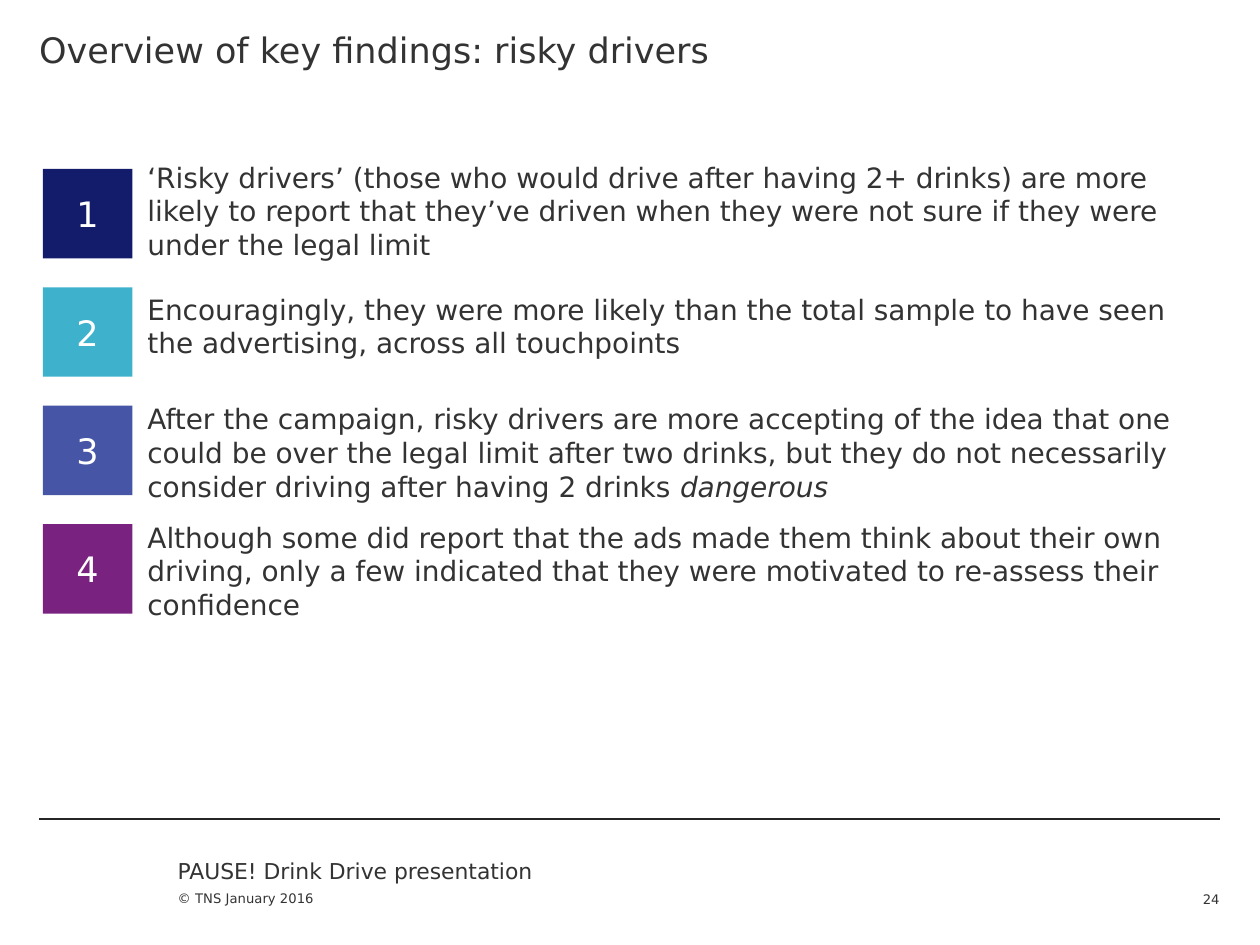
from dataclasses import dataclass

import pptx
import pptx.dml.color
import pptx.enum.shapes
import pptx.enum.text
import pptx.oxml
import pptx.util
from pptx.util import Inches

ALIGN = pptx.enum.text.PP_ALIGN
ANCHOR = pptx.enum.text.MSO_ANCHOR


@dataclass(frozen=True)
class Theme:
    font: str = "DejaVu Sans"
    ink: str = "333333"
    rule: str = "262626"
    white: str = "FFFFFF"
    heading: float = 20
    body: float = 16
    footer: float = 12.5
    small: float = 7.5


THEME = Theme()
LEFT, RIGHT = 0.31, 9.68
BADGE_LEFT, BADGE_TOP, BADGE_SIZE, BADGE_STEP = 0.34, 1.34, 0.71, 0.94
FINDING_LEFT = 1.17

# Badge colour, top of the text box, plain text, italic ending
FINDINGS = [
    ("131C6B", 1.04,
     "‘Risky drivers’ (those who would drive after having 2+ drinks) are more likely "
     "to report that they’ve driven when they were not sure if they were under the "
     "legal limit", ""),
    ("3EB1CC", 2.09,
     "Encouragingly, they were more likely than the total sample to have seen the "
     "advertising, across all touchpoints", ""),
    ("4655A5", 2.96,
     "After the campaign, risky drivers are more accepting of the idea that one could "
     "be over the legal limit after two drinks, but they do not necessarily consider "
     "driving after having 2 drinks ", "dangerous"),
    ("7A2280", 3.9,
     "Although some did report that the ads made them think about their own driving, "
     "only a few indicated that they were motivated to re-assess their confidence", ""),
]


def rgb(value):
    return pptx.dml.color.RGBColor.from_string(value)


def format_text(shape, size, color=THEME.ink, align=ALIGN.LEFT, anchor=ANCHOR.TOP,
                top=0, bottom=0):
    frame = shape.text_frame
    frame.word_wrap = True
    frame.auto_size = pptx.enum.text.MSO_AUTO_SIZE.NONE
    frame.vertical_anchor = anchor
    frame.margin_left = frame.margin_right = 0
    frame.margin_top, frame.margin_bottom = Inches(top), Inches(bottom)
    for para in frame.paragraphs:
        para.alignment = align
        for span in para.runs:
            span.font.name = THEME.font
            span.font.size = pptx.util.Pt(size)
            span.font.color.rgb = rgb(color)


def place(shape, left, top, width, height):
    shape.left, shape.top = Inches(left), Inches(top)
    shape.width, shape.height = Inches(width), Inches(height)


def add_title(page, text):
    title = page.shapes.title
    place(title, LEFT, 0, RIGHT - LEFT, 1.13)
    title.text_frame.text = text
    format_text(title, THEME.heading, top=0.23)


def add_text(page, area, text, size, italic_ending="", **layout):
    box = page.shapes.add_textbox(*map(Inches, area))
    box.text_frame.text = text
    if italic_ending:
        span = box.text_frame.paragraphs[0].add_run()
        span.text = italic_ending
        span.font.italic = True
    format_text(box, size, **layout)


def add_badge(page, number, top, color):
    area = (BADGE_LEFT, top, BADGE_SIZE, BADGE_SIZE)
    badge = page.shapes.add_shape(
        pptx.enum.shapes.MSO_SHAPE.RECTANGLE, *map(Inches, area))
    badge.shadow.inherit = False
    badge.fill.solid()
    badge.fill.fore_color.rgb = rgb(color)
    badge.line.fill.background()
    badge.text_frame.text = str(number)
    format_text(badge, THEME.heading, THEME.white, ALIGN.CENTER, ANCHOR.MIDDLE)


def add_rule(page, top):
    rule = page.shapes.add_connector(
        pptx.enum.shapes.MSO_CONNECTOR.STRAIGHT,
        Inches(LEFT), Inches(top), Inches(RIGHT), Inches(top))
    rule.line.color.rgb = rgb(THEME.rule)
    rule.line.width = pptx.util.Pt(0.75)
    rule._element.spPr.append(pptx.oxml.parse_xml(
        '<a:effectLst xmlns:a="http://schemas.openxmlformats.org/drawingml/2006/main"/>'))


def add_footer(page):
    add_rule(page, 6.5)
    add_text(page, (1.41, 6.81, 3.31, 0.22), "PAUSE! Drink Drive presentation",
             THEME.footer)
    add_text(page, (1.41, 6.92, 2.78, 0.58), "© TNS January 2016", THEME.small,
             anchor=ANCHOR.BOTTOM, bottom=0.31)
    add_text(page, (9.13, 6.92, 0.55, 0.28), "24", THEME.small,
             align=ALIGN.RIGHT, anchor=ANCHOR.BOTTOM)


def main():
    deck = pptx.Presentation()
    deck.slide_width, deck.slide_height = Inches(10), Inches(7.5)
    page = deck.slides.add_slide(deck.slide_layouts.get_by_name("Title Only"))
    add_title(page, "Overview of key findings: risky drivers")
    for index, (color, text_top, text, italic_ending) in enumerate(FINDINGS):
        add_badge(page, index + 1, BADGE_TOP + index * BADGE_STEP, color)
        add_text(page, (FINDING_LEFT, text_top, RIGHT - FINDING_LEFT, 0.81), text,
                 THEME.body, italic_ending, top=0.23)
    add_footer(page)
    deck.save("out.pptx")


if __name__ == "__main__":
    main()
